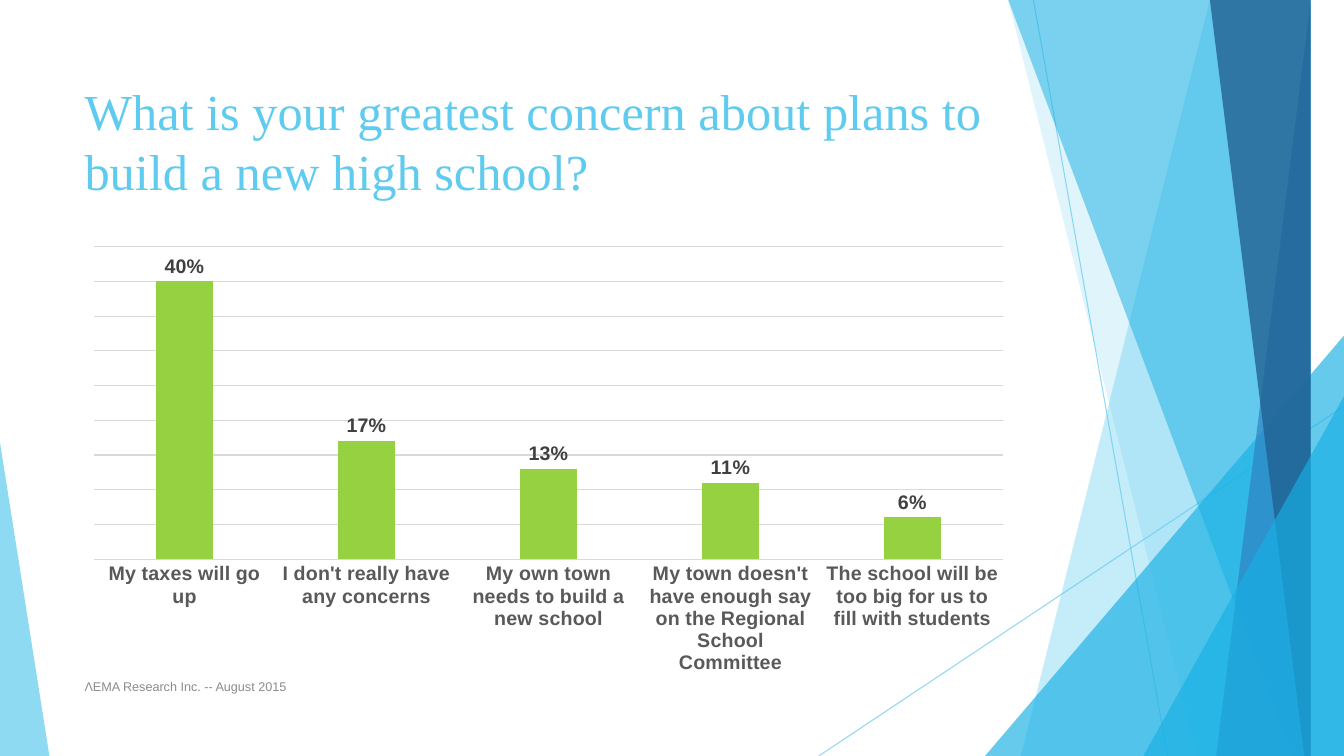
from lxml import etree
from pptx import Presentation, util as u
from pptx.chart import data
from pptx.dml import color
from pptx.enum import chart as ch, shapes, text
from pptx.oxml import ns

COLORS = {
    "sky": "5FCBEF", "cyan": "17B0E4", "blue": "2E83C3", "navy": "226292",
    "bar": "96D141", "rule": "D9D9D9", "category": "595959",
    "value": "404040", "credit": "8C8C8C",
}
WIDTH, HEIGHT, TOP = 13.33, 7.5, -0.01


def paint(fill, shade, opacity=100):
    fill.solid()
    fill.fore_color.rgb = color.RGBColor.from_string(COLORS[shade])
    if opacity < 100:
        tint = fill._xPr.find(".//" + ns.qn("a:srgbClr"))
        etree.SubElement(tint, ns.qn("a:alpha"), val=str(opacity * 1000))


def style(font, shade, **values):
    paint(font.fill, shade)
    for key, value in values.items():
        setattr(font, key, value)


deck = Presentation()
deck.slide_width, deck.slide_height = u.Inches(WIDTH), u.Inches(HEIGHT)
slide = deck.slides.add_slide(deck.slide_layouts[6])

for ends in [(10.25, 0, 11.58, HEIGHT), (WIDTH, 4.03, 8.12, HEIGHT)]:
    ray = slide.shapes.add_connector(
        shapes.MSO_CONNECTOR.STRAIGHT, *[u.Inches(v) for v in ends])
    ray.line.width = u.Pt(0.75)
    paint(ray.line.fill, "sky", 70)
    etree.SubElement(ray._element.spPr, ns.qn("a:effectLst"))

facets = [
    ("band", (12.28, 10.04), "sky", 36),
    ("band", (10.5, 11.83), "sky", 20),
    ("triangle", (9.77, 3.33, 3.56, 1), "cyan", 66),
    ("band", (10.21, 12.91), "cyan", 50),
    ("band", (13.03, 11.92), "blue", 70),
    ("band", (11.96, 13.18), "navy", 80),
    ("triangle", (11.34, 3.93, 1.99, 1), "cyan", 66),
    ("triangle", (0, 4.39, 0.49, 0), "sky", 70),
]
for kind, geometry, shade, opacity in facets:
    if kind == "band":
        upper, lower = geometry
        outline = slide.shapes.build_freeform(upper, TOP, scale=u.Inches(1))
        outline.add_line_segments([(WIDTH, TOP), (WIDTH, HEIGHT), (lower, HEIGHT)])
        facet = outline.convert_to_shape()
    else:
        left, top, width, apex = geometry
        facet = slide.shapes.add_shape(
            shapes.MSO_SHAPE.ISOSCELES_TRIANGLE,
            *[u.Inches(v) for v in (left, top, width, HEIGHT - top)])
        facet.adjustments[0] = apex
    paint(facet.fill, shade, opacity)
    facet.line.fill.background()
    facet.shadow.inherit = False

captions = [
    ((0.74, 0.67, 9.4, 1.44), "sky", "Times New Roman", 36,
     "What is your greatest concern about plans to build a new high school?"),
    ((0.74, 6.61, 6.89, 0.4), "credit", "Arial", 9,
     "ΛΕΜΑ Research Inc. -- August 2015"),
]
for box, shade, face, size, words in captions:
    caption = slide.shapes.add_textbox(*[u.Inches(v) for v in box]).text_frame
    caption.word_wrap = True
    caption.vertical_anchor = text.MSO_ANCHOR.MIDDLE
    run = caption.paragraphs[0].add_run()
    run.text = words
    style(run.font, shade, name=face, size=u.Pt(size))

concerns = {
    "My taxes will go up": 0.40,
    "I don't really have any concerns": 0.17,
    "My own town needs to build a new school": 0.13,
    "My town doesn't have enough say on the Regional School Committee": 0.11,
    "The school will be too big for us to fill with students": 0.06,
}
answers = data.CategoryChartData(number_format="0%")
answers.categories = list(concerns)
answers.add_series("Series 1", list(concerns.values()))
chart = slide.shapes.add_chart(
    ch.XL_CHART_TYPE.COLUMN_CLUSTERED,
    *[u.Inches(v) for v in (0.74, 2.36, 9.4, 4.41)], answers).chart
chart.has_legend = chart.has_title = False
chart.font.name, chart.font.size = "Arial", u.Pt(10)
bold = {"name": "Arial", "size": u.Pt(14), "bold": True}

topics = chart.category_axis
topics.major_tick_mark = ch.XL_TICK_MARK.NONE
style(topics.tick_labels.font, "category", **bold)

share = chart.value_axis
share_format = {"visible": False, "has_major_gridlines": True,
                "minimum_scale": 0, "maximum_scale": 0.45, "major_unit": 0.05}
for key, value in share_format.items():
    setattr(share, key, value)
for rule in (topics.format.line, share.major_gridlines.format.line):
    rule.width = u.Pt(0.75)
    paint(rule.fill, "rule")

plot = chart.plots[0]
plot_format = {"gap_width": 219, "overlap": -27,
               "vary_by_categories": False, "has_data_labels": True}
for key, value in plot_format.items():
    setattr(plot, key, value)
paint(plot.series[0].format.fill, "bar")

labels = plot.data_labels
label_format = {"show_value": True, "number_format": "0%",
                "number_format_is_linked": False,
                "position": ch.XL_LABEL_POSITION.OUTSIDE_END}
for key, value in label_format.items():
    setattr(labels, key, value)
style(labels.font, "value", **bold)

deck.save("out.pptx")
